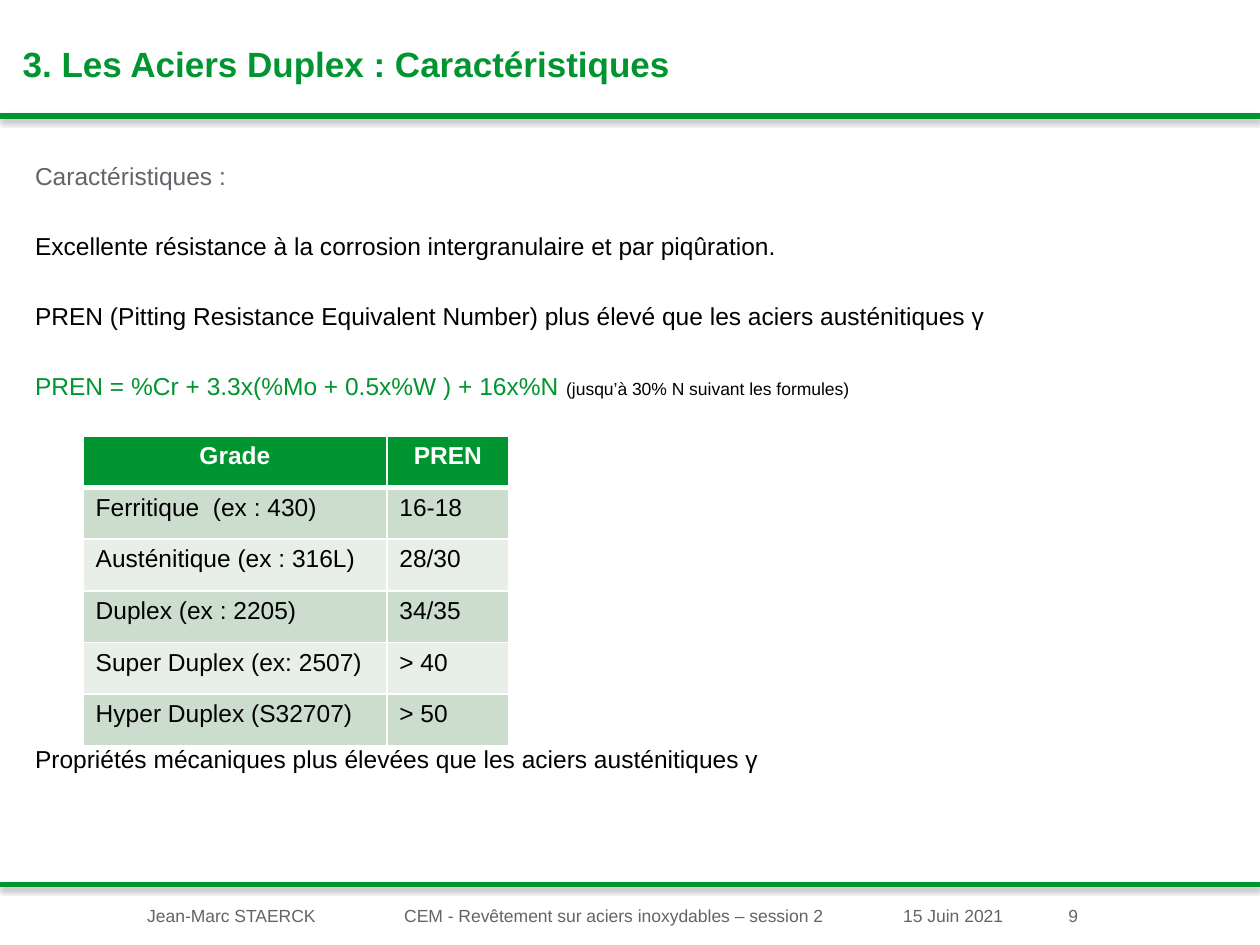
from lxml.etree import SubElement
from pptx import Presentation
from pptx.dml.color import RGBColor
from pptx.enum.shapes import MSO_CONNECTOR
from pptx.enum.text import MSO_ANCHOR, PP_ALIGN
from pptx.oxml import parse_xml
from pptx.oxml.ns import nsdecls, qn
from pptx.util import Inches, Pt

GREEN = RGBColor(0x00, 0x95, 0x30)
GREY = RGBColor(0x62, 0x64, 0x69)
BLACK = RGBColor(0x00, 0x00, 0x00)
WHITE = RGBColor(0xFF, 0xFF, 0xFF)
BANDS = [RGBColor(0xCC, 0xDD, 0xCD), RGBColor(0xE7, 0xEF, 0xE8)]

TITLE = "3. Les Aciers Duplex : Caractéristiques"
BODY = [
    [("Caractéristiques :", 14, GREY)],
    [("Excellente résistance à la corrosion intergranulaire et par piqûration.", 14, BLACK)],
    [("PREN (Pitting Resistance Equivalent Number) plus élevé que les aciers austénitiques γ", 14, BLACK)],
    [("PREN = %Cr + 3.3x(%Mo + 0.5x%W ) + 16x%N ", 14, GREEN),
     ("(jusqu’à 30% N suivant les formules)", 10, BLACK)],
]
CONCLUSION = "Propriétés mécaniques plus élevées que les aciers austénitiques γ"
GRADES = [
    ("Grade", "PREN"),
    ("Ferritique  (ex : 430)", "16-18"),
    ("Austénitique (ex : 316L)", "28/30"),
    ("Duplex (ex : 2205)", "34/35"),
    ("Super Duplex (ex: 2507)", "> 40"),
    ("Hyper Duplex (S32707)", "> 50"),
]
COLUMN_WIDTHS = [2.41, 0.97]
ROW_HEIGHT = 0.41
FOOTER = [
    (0.99, "Jean-Marc STAERCK"),
    (3.03, "CEM - Revêtement sur aciers inoxydables – session 2"),
    (6.99, "15 Juin 2021"),
    (8.3, "9"),
]
RULE_HEIGHTS = [0.92, 7.02]


def add_run(paragraph, text, size=14, color=BLACK, bold=False):
    run = paragraph.add_run()
    run.text = text
    run.font.name = "Arial"
    run.font.size = Pt(size)
    run.font.color.rgb = color
    run.font.bold = bold


def add_text_frame(slide, left, top, width, height):
    frame = slide.shapes.add_textbox(*map(Inches, (left, top, width, height))).text_frame
    frame.word_wrap = True
    return frame


def add_rule(slide, top):
    line = slide.shapes.add_connector(
        MSO_CONNECTOR.STRAIGHT, 0, Inches(top), Inches(10), Inches(top))
    line.line.color.rgb = GREEN
    line.line.width = Pt(3)
    effects = SubElement(line._element.spPr, qn("a:effectLst"))
    shadow = SubElement(effects, qn("a:outerShdw"), blurRad=str(Pt(3.1)),
                        dist=str(Pt(1.8)), dir="5400000", rotWithShape="0")
    color = SubElement(shadow, qn("a:srgbClr"), val="000000")
    SubElement(color, qn("a:alpha"), val="35000")


def set_borders(cell, bottom):
    properties = cell._tc.get_or_add_tcPr()
    widths = {"lnL": 1, "lnR": 1, "lnT": 1, "lnB": bottom}
    for position, (side, width) in enumerate(widths.items()):
        properties.insert(position, parse_xml(
            f'<a:{side} {nsdecls("a")} w="{Pt(width)}"><a:solidFill>'
            f'<a:srgbClr val="{WHITE}"/></a:solidFill></a:{side}>'))


def add_title(slide):
    frame = add_text_frame(slide, 0.18, 0.09, 7.2, 0.83)
    frame.margin_left = frame.margin_right = 0
    frame.margin_top = frame.margin_bottom = Inches(0.01)
    frame.vertical_anchor = MSO_ANCHOR.MIDDLE
    add_run(frame.paragraphs[0], TITLE, size=20, color=GREEN, bold=True)


def add_body(slide):
    frame = add_text_frame(slide, 0.18, 1.23, 9.16, 2.1)
    for index, runs in enumerate(BODY):
        paragraph = frame.add_paragraph() if index else frame.paragraphs[0]
        if index:
            paragraph.space_before = Pt(23.2)
        for text, size, color in runs:
            add_run(paragraph, text, size=size, color=color)
    conclusion = add_text_frame(slide, 0.18, 5.86, 9.16, 0.34)
    add_run(conclusion.paragraphs[0], CONCLUSION)


def add_grades(slide):
    table = slide.shapes.add_table(
        len(GRADES), len(COLUMN_WIDTHS), Inches(0.66), Inches(3.46),
        Inches(sum(COLUMN_WIDTHS)), Inches(ROW_HEIGHT * len(GRADES))).table
    for column, width in zip(table.columns, COLUMN_WIDTHS):
        column.width = Inches(width)
    for row, values in enumerate(GRADES):
        header = row == 0
        table.rows[row].height = Inches(ROW_HEIGHT)
        for column, value in enumerate(values):
            cell = table.cell(row, column)
            cell.fill.solid()
            cell.fill.fore_color.rgb = GREEN if header else BANDS[(row - 1) % 2]
            set_borders(cell, bottom=3 if header else 1)
            paragraph = cell.text_frame.paragraphs[0]
            paragraph.alignment = PP_ALIGN.CENTER if header else PP_ALIGN.LEFT
            add_run(paragraph, value, color=WHITE if header else BLACK, bold=header)


def add_footer(slide):
    paragraph = add_text_frame(slide, 0.08, 7.13, 9.18, 0.27).paragraphs[0]
    tabs = SubElement(paragraph._p.get_or_add_pPr(), qn("a:tabLst"))
    for position, text in FOOTER:
        SubElement(tabs, qn("a:tab"), pos=str(Inches(position)), algn="l")
        add_run(paragraph, "\t" + text, size=10, color=GREY)


def main():
    presentation = Presentation()
    presentation.slide_width = Inches(10)
    presentation.slide_height = Inches(7.5)
    slide = presentation.slides.add_slide(presentation.slide_layouts[6])
    for top in RULE_HEIGHTS:
        add_rule(slide, top)
    add_footer(slide)
    add_title(slide)
    add_body(slide)
    add_grades(slide)
    presentation.save("out.pptx")


if __name__ == "__main__":
    main()
